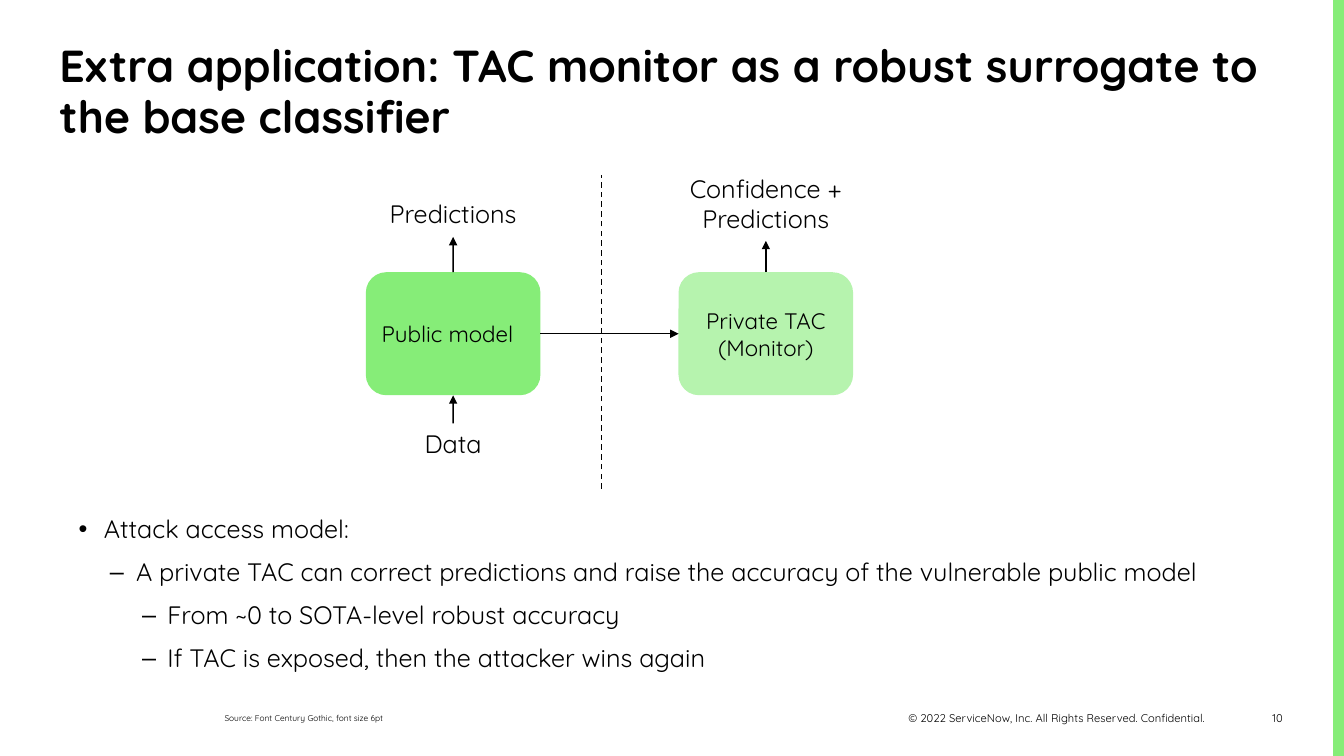
from lxml.etree import SubElement
from pptx import Presentation
from pptx.dml.color import RGBColor
from pptx.enum.dml import MSO_LINE
from pptx.enum.shapes import MSO_CONNECTOR, MSO_SHAPE
from pptx.enum.text import MSO_ANCHOR, PP_ALIGN
from pptx.oxml.ns import qn
from pptx.util import Cm, Pt

BLACK = RGBColor(0x00, 0x00, 0x00)
GREEN = RGBColor(0x86, 0xED, 0x78)
PALE_GREEN = RGBColor(0xB6, 0xF3, 0xAE)
FONT = "Quicksand"
LEFT, CENTER, RIGHT = PP_ALIGN.LEFT, PP_ALIGN.CENTER, PP_ALIGN.RIGHT
TOP, MIDDLE, BOTTOM = MSO_ANCHOR.TOP, MSO_ANCHOR.MIDDLE, MSO_ANCHOR.BOTTOM

# Content: lengths in centimetres
TITLE = "Extra application: TAC monitor as a robust surrogate to the base classifier"
BULLETS = [  # level, text
    (0, "Attack access model:"),
    (1, "A private TAC can correct predictions and raise the accuracy "
        "of the vulnerable public model"),
    (2, "From ~0 to SOTA-level robust accuracy"),
    (2, "If TAC is exposed, then the attacker wins again"),
]
BULLET_STYLES = [("•", 0.64, 0.64), ("–", 1.45, 0.66), ("–", 2.24, 0.64)]
FOOTERS = [  # text, box, size, alignment, anchor
    ("© 2022 ServiceNow, Inc. All Rights Reserved. Confidential.",
     (22.05, 17.81, 8.58, 0.58), 8, RIGHT, MIDDLE),
    ("10", (30.73, 17.81, 1.85, 0.64), 8, RIGHT, TOP),
    ("Source: Font Century Gothic, font size 6pt",
     (5.41, 17.78, 16.43, 0.58), 6, LEFT, BOTTOM),
]
PUBLIC_X, PRIVATE_X = 11.42, 19.3  # column centres
MODEL_TOP, MODEL_WIDTH, MODEL_HEIGHT = 6.86, 4.4, 3.1
MODELS = {  # text, column centre, fill, alignment
    "public": ("Public model", PUBLIC_X, GREEN, LEFT),
    "private": ("Private TAC (Monitor)", PRIVATE_X, PALE_GREEN, CENTER),
}
LABELS = {  # text, column centre, top, width, height
    "data": ("Data", PUBLIC_X, 10.67, 2.88, 1.09),
    "predictions": ("Predictions", PUBLIC_X, 4.88, 4.11, 1.09),
    "confidence": ("Confidence +\nPredictions", PRIVATE_X, 4.24, 4.9, 1.83),
}
SITE_TOP, SITE_LEFT, SITE_BOTTOM, SITE_RIGHT = range(4)
ARROWS = [  # from, site, to, site
    ("data", SITE_TOP, "public", SITE_BOTTOM),
    ("public", SITE_TOP, "predictions", SITE_BOTTOM),
    ("public", SITE_RIGHT, "private", SITE_LEFT),
    ("private", SITE_TOP, "confidence", SITE_BOTTOM),
]
DIVIDER_X, DIVIDER_TOP, DIVIDER_BOTTOM = 15.16, 4.42, 12.32

presentation = Presentation()
presentation.slide_width, presentation.slide_height = Cm(33.87), Cm(19.05)
slide = presentation.slides.add_slide(presentation.slide_layouts[6])


def add_run(paragraph, text, size, bold=False):
    run = paragraph.add_run()
    run.text = text
    run.font.name, run.font.size, run.font.bold = FONT, Pt(size), bold
    run.font.color.rgb = BLACK


def write(shape, text, size, align=LEFT, anchor=TOP, bold=False):
    frame = shape.text_frame
    frame.word_wrap = True
    frame.vertical_anchor = anchor
    paragraph = frame.paragraphs[0]
    paragraph.alignment = align
    for number, line in enumerate(text.split("\n")):
        if number:
            paragraph.add_line_break()
        add_run(paragraph, line, size, bold)
    return paragraph


def add_box(box):
    return slide.shapes.add_textbox(*map(Cm, box))


def add_filled(preset, box, color):
    shape = slide.shapes.add_shape(preset, *map(Cm, box))
    shape.shadow.inherit = False
    shape.fill.solid()
    shape.fill.fore_color.rgb = color
    shape.line.fill.background()
    return shape


def add_line(*ends):
    line = slide.shapes.add_connector(MSO_CONNECTOR.STRAIGHT, *map(Cm, ends))
    line.line.color.rgb = BLACK
    line.line.width = Pt(1)
    SubElement(line._element.spPr, qn("a:effectLst"))
    return line


# Footer and side stripe
for text, box, size, align, anchor in FOOTERS:
    write(add_box(box), text, size, align, anchor)
add_filled(MSO_SHAPE.RECTANGLE, (33.6, 0, 0.27, 19.05), GREEN)

# Title
title = add_box((1.25, 0.86, 31.09, 3.33))
title.text_frame.margin_top = Cm(0.2)
write(title, TITLE, 32, bold=True).line_spacing = 0.95

# Bullet list
body = add_box((1.73, 12.85, 31.37, 3.33)).text_frame
body.word_wrap = True
for number, (level, text) in enumerate(BULLETS):
    paragraph = body.add_paragraph() if number else body.paragraphs[0]
    symbol, indent, hanging = BULLET_STYLES[level]
    paragraph.level = level
    paragraph.line_spacing = 0.96
    paragraph.space_before = Pt(4 if number else 0)
    paragraph.space_after = Pt(6)
    properties = paragraph._p.get_or_add_pPr()
    properties.set("marL", str(Cm(indent)))
    properties.set("indent", str(-Cm(hanging)))
    SubElement(properties, qn("a:buFont"), typeface="Arial")
    SubElement(properties, qn("a:buChar"), char=symbol)
    add_run(paragraph, text, 18)

# Diagram: models and labels, centred on their columns
nodes = {}
for name, (text, center, color, align) in MODELS.items():
    box = (center - MODEL_WIDTH / 2, MODEL_TOP, MODEL_WIDTH, MODEL_HEIGHT)
    nodes[name] = add_filled(MSO_SHAPE.ROUNDED_RECTANGLE, box, color)
    write(nodes[name], text, 16, align, MIDDLE)
for name, (text, center, top, width, height) in LABELS.items():
    nodes[name] = add_box((center - width / 2, top, width, height))
    write(nodes[name], text, 18, CENTER)

# Diagram: arrows and divider
for start, start_site, end, end_site in ARROWS:
    arrow = add_line(0, 0, 0, 0)
    arrow.begin_connect(nodes[start], start_site)
    arrow.end_connect(nodes[end], end_site)
    SubElement(arrow.line._get_or_add_ln(), qn("a:tailEnd"), type="triangle")
divider = add_line(DIVIDER_X, DIVIDER_BOTTOM, DIVIDER_X, DIVIDER_TOP)
divider.line.dash_style = MSO_LINE.DASH

presentation.save("out.pptx")
